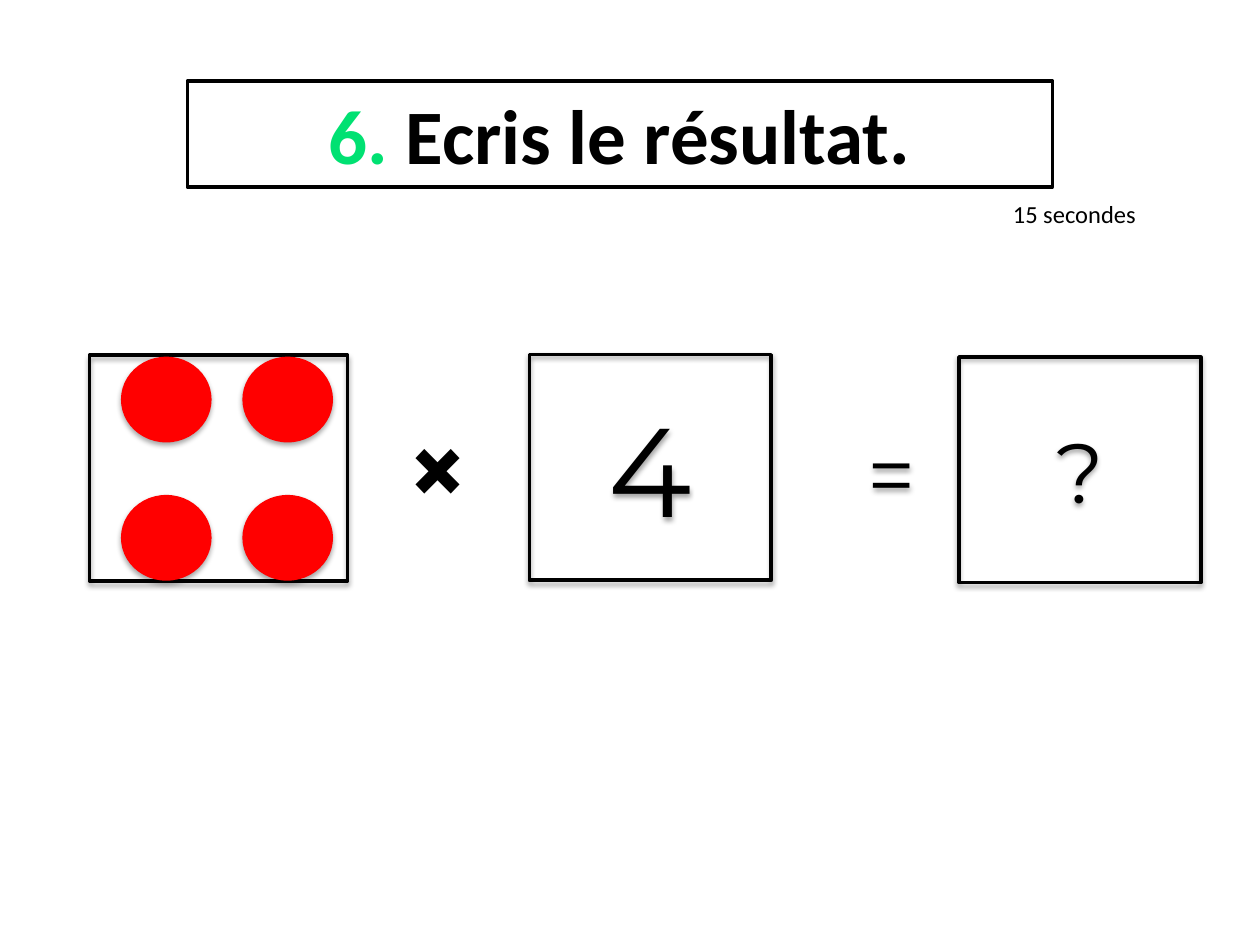
from dataclasses import dataclass
from itertools import product
from typing import Optional

from lxml import etree
from pptx import Presentation
from pptx.dml.color import RGBColor
from pptx.enum.shapes import MSO_SHAPE
from pptx.enum.text import MSO_ANCHOR, MSO_AUTO_SIZE, PP_ALIGN
from pptx.oxml.ns import qn
from pptx.util import Pt

RECTANGLE, OVAL = MSO_SHAPE.RECTANGLE, MSO_SHAPE.OVAL
TOP, MIDDLE = MSO_ANCHOR.TOP, MSO_ANCHOR.MIDDLE
LEFT, CENTER = PP_ALIGN.LEFT, PP_ALIGN.CENTER
GROW, FIXED = MSO_AUTO_SIZE.SHAPE_TO_FIT_TEXT, MSO_AUTO_SIZE.NONE


@dataclass(frozen=True)
class Theme:
    black: RGBColor = RGBColor(0, 0, 0)
    white: RGBColor = RGBColor(255, 255, 255)
    green: RGBColor = RGBColor(0x00, 0xE1, 0x72)
    red: RGBColor = RGBColor(255, 0, 0)
    heading_font: str = "Calibri"
    number_font: str = "Montserrat"
    title_size: float = 44
    note_size: float = 14
    times_size: float = 60
    factor_size: float = 72
    symbol_size: float = 48
    outline: float = 2


THEME = Theme()


@dataclass(frozen=True)
class Box:
    left: float
    top: float
    width: float
    height: float
    fill: Optional[RGBColor] = None
    outlined: bool = False
    shadowed: bool = False


@dataclass(frozen=True)
class Label:
    spans: tuple[tuple[str, RGBColor], ...]
    size: float
    font: str = THEME.number_font
    bold: bool = False
    align: PP_ALIGN = CENTER
    anchor: MSO_ANCHOR = MIDDLE
    grow: bool = False
    wrap: bool = True


def cast_shadow(shape) -> None:
    effects = shape._element.spPr.find(qn("a:effectLst"))
    shadow = etree.SubElement(
        effects, qn("a:outerShdw"), blurRad=str(Pt(3.1)), dist=str(Pt(1.8)),
        dir="5400000", rotWithShape="0")
    color = etree.SubElement(shadow, qn("a:srgbClr"), val=str(THEME.black))
    etree.SubElement(color, qn("a:alpha"), val="35000")


def draw_box(shapes, box: Box, kind: MSO_SHAPE = RECTANGLE):
    shape = shapes.add_shape(
        kind, Pt(box.left), Pt(box.top), Pt(box.width), Pt(box.height))
    shape.shadow.inherit = False
    if box.fill is None:
        shape.fill.background()
    else:
        shape.fill.solid()
        shape.fill.fore_color.rgb = box.fill
    if box.outlined:
        shape.line.color.rgb = THEME.black
        shape.line.width = Pt(THEME.outline)
    else:
        shape.line.fill.background()
    if box.shadowed:
        cast_shadow(shape)
    return shape


def write_label(shape, label: Label) -> None:
    frame = shape.text_frame
    frame.word_wrap = label.wrap
    frame.auto_size = GROW if label.grow else FIXED
    frame.vertical_anchor = label.anchor
    para = frame.paragraphs[0]
    para.alignment = label.align
    para.font.name = label.font
    para.font.size = Pt(label.size)
    para.font.bold = label.bold
    for text, color in label.spans:
        span = para.add_run()
        span.text = text
        span.font.color.rgb = color


def draw_dots(page) -> None:
    group = page.shapes.add_group_shape()
    draw_box(group.shapes, Box(51.1, 203, 147.6, 128.9, outlined=True, shadowed=True))
    for top, left in product((203.8, 282.8), (69.1, 138.5)):
        dot = Box(left, top, 51.8, 49, fill=THEME.red, shadowed=True)
        draw_box(group.shapes, dot, OVAL)


def black(text: str) -> tuple[tuple[str, RGBColor], ...]:
    return ((text, THEME.black),)


ITEMS = (
    (Box(107.1, 46.3, 494.3, 60.6, fill=THEME.white, outlined=True),
     Label((("6.", THEME.green), (" Ecris le résultat.", THEME.black)),
           THEME.title_size, THEME.heading_font, bold=True, anchor=TOP, grow=True)),
    (Box(571.7, 110.2, 85.7, 24.5, fill=THEME.white),
     Label(black("15 secondes"), THEME.note_size, THEME.heading_font,
           align=LEFT, anchor=TOP, grow=True, wrap=False)),
    (Box(205.9, 226.8, 89.3, 79.9),
     Label(black("×"), THEME.times_size, bold=True, anchor=TOP, grow=True)),
    (Box(302.5, 202.7, 138.2, 128.9, outlined=True, shadowed=True),
     Label(black("4"), THEME.factor_size)),
    (Box(548, 204, 138.2, 128.9, outlined=True, shadowed=True),
     Label(black("?"), THEME.symbol_size)),
    (Box(440.6, 205.2, 138.2, 128.9, shadowed=True),
     Label(black("="), THEME.symbol_size)),
)


def main() -> None:
    deck = Presentation()
    deck.slide_width, deck.slide_height = Pt(720), Pt(540)
    page = deck.slides.add_slide(deck.slide_layouts[6])
    for box, label in ITEMS:
        write_label(draw_box(page.shapes, box), label)
    draw_dots(page)
    deck.save("out.pptx")


if __name__ == "__main__":
    main()
